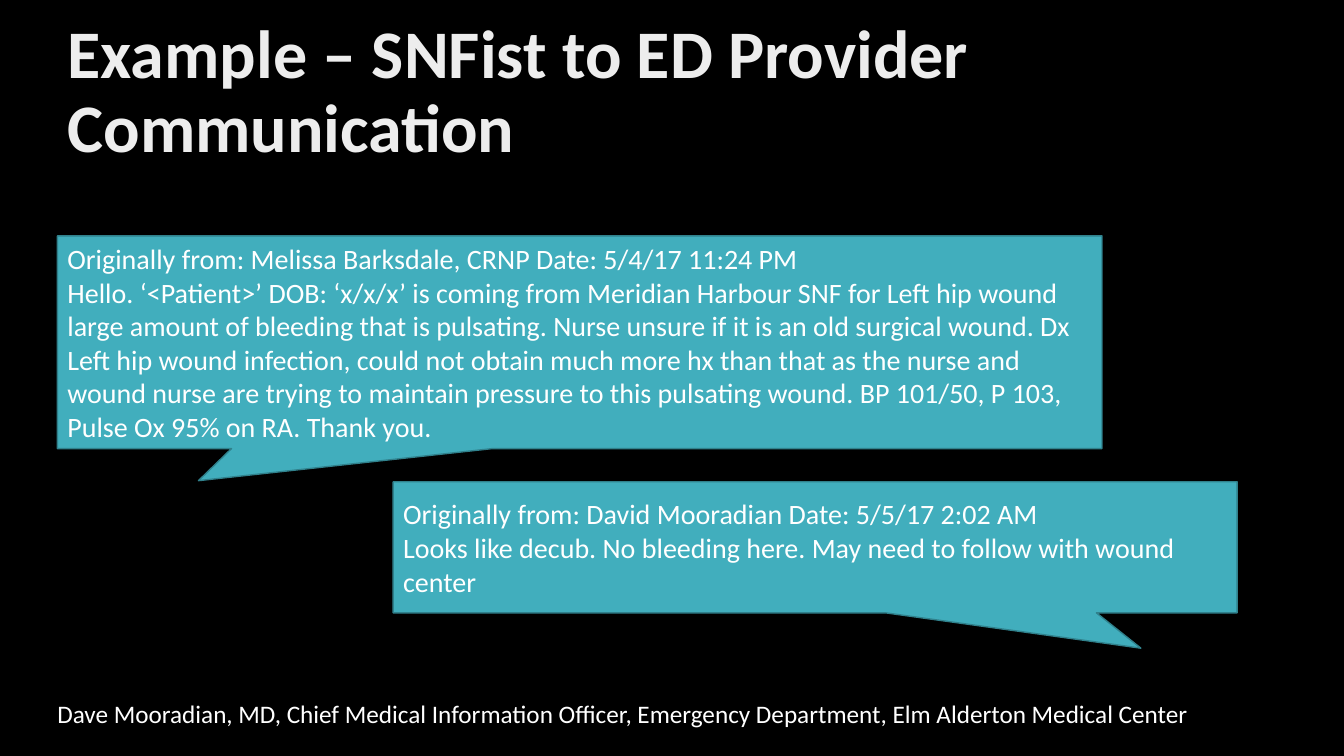
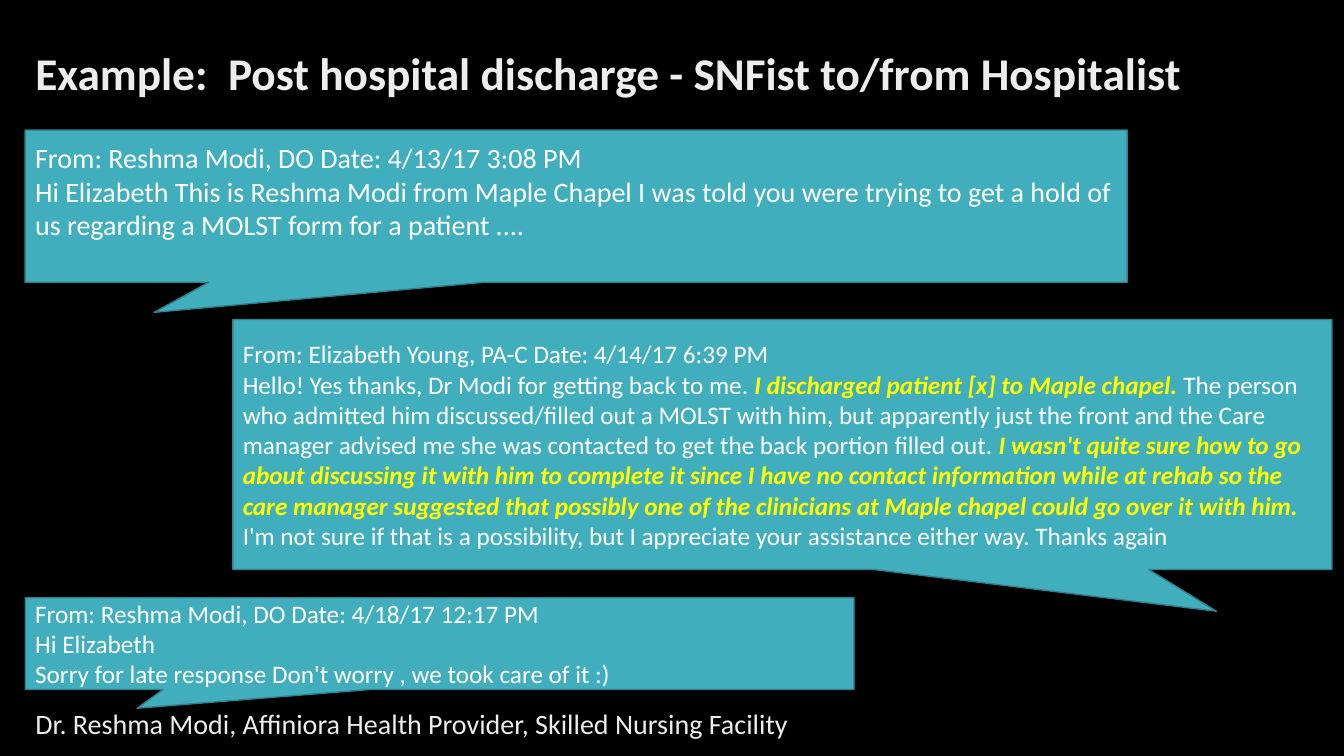
from pptx import Presentation
from pptx.dml.color import RGBColor
from pptx.enum import shapes, text
from pptx.util import Inches, Pt
from lxml import etree

FONT = "Calibri"
BLACK = RGBColor(0x00, 0x00, 0x00)
WHITE = RGBColor(0xFF, 0xFF, 0xFF)
SILVER = RGBColor(0xED, 0xED, 0xED)
TEAL = RGBColor(0x41, 0xAE, 0xBD)
DARK_TEAL = RGBColor(0x30, 0x81, 0x8C)
YELLOW = RGBColor(0xFF, 0xFF, 0x00)

TITLE_ONLY, TITLE_AND_BODY = 5, 1
PLAIN = dict(name=FONT, color=WHITE)
HIGHLIGHT = dict(name=FONT, color=YELLOW, bold=True, italic=True)

# Content: boxes are (left, top, width, height) in inches.
# A message paragraph alternates plain and highlighted pieces.
SLIDES = [
    dict(
        layout=TITLE_ONLY,
        title=("Example – SNFist to ED Provider Communication", (0.57, 0.2, 12.35, 1.45), 48.6),
        credit=("Dave Mooradian, MD, Chief Medical Information Officer, Emergency Department, "
                "Elm Alderton Medical Center", (0.47, 6.88, 12.37, 0.4), 18),
        messages=[
            dict(box=(0.57, 2.34, 10.36, 2.11), tail=(-0.365, 0.651), size=20, paragraphs=[
                ["Originally from: Melissa Barksdale, CRNP Date: 5/4/17 11:24 PM"],
                ["Hello. ‘<Patient>’ DOB: ‘x/x/x’ is coming from Meridian Harbour SNF for Left hip "
                 "wound large amount of bleeding that is pulsating. Nurse unsure if it is an old "
                 "surgical wound. Dx Left hip wound infection, could not obtain much more hx than "
                 "that as the nurse and wound nurse are trying to maintain pressure to this "
                 "pulsating wound. BP 101/50, P 103, Pulse Ox 95% on RA. Thank you."],
            ]),
            dict(box=(3.9, 4.78, 8.37, 1.3), tail=(0.386, 0.77), size=20, paragraphs=[
                ["Originally from: David Mooradian Date: 5/5/17 2:02 AM"],
                ["Looks like decub. No bleeding here. May need to follow with wound center"],
            ]),
        ],
    ),
    dict(
        layout=TITLE_AND_BODY,
        title=("Example:  Post hospital discharge - SNFist to/from Hospitalist",
               (0.25, 0.26, 12.66, 0.99), 32.4),
        credit=("Dr. Reshma Modi, Affiniora Health Provider, Skilled Nursing Facility",
                (0.25, 7, 11.5, 0.5), 20),
        messages=[
            dict(box=(0.25, 1.29, 10.93, 1.51), tail=(-0.383, 0.698), size=20, bottom=0.35,
                 paragraphs=[
                ["From: Reshma Modi, DO Date: 4/13/17 3:08 PM"],
                ["Hi Elizabeth This is Reshma Modi from Maple Chapel I was told you were trying to "
                 "get a hold of us regarding a MOLST form for a patient ...."],
            ]),
            dict(box=(2.31, 3.17, 10.9, 2.48), tail=(0.395, 0.667), size=18, paragraphs=[
                ["From: Elizabeth Young, PA-C Date: 4/14/17 6:39 PM"],
                ["Hello! Yes thanks, Dr Modi for getting back to me. ",
                 "I discharged patient [x] to Maple chapel. ",
                 "The person who admitted him discussed/filled out a MOLST with him, but apparently "
                 "just the front and the Care manager advised me she was contacted to get the back "
                 "portion filled out. ",
                 "I wasn't quite sure how to go about discussing it with him to complete it since I "
                 "have no contact information while at rehab so the care manager suggested that "
                 "possibly one of the clinicians at Maple chapel could go over it with him. ",
                 "I'm not sure if that is a possibility, but I appreciate your assistance either "
                 "way. Thanks again"],
            ]),
            dict(box=(0.25, 5.93, 8.22, 0.91), tail=(-0.365, 0.705), size=18, paragraphs=[
                ["From: Reshma Modi, DO Date: 4/18/17 12:17 PM"],
                ["Hi Elizabeth"],
                ["Sorry for late response Don't worry , we took care of it :)"],
            ]),
        ],
    ),
]


def style(font, size, color, **formats):
    font.size = Pt(size)
    font.color.rgb = color
    for key, value in formats.items():
        setattr(font, key, value)


def place(shape, box):
    for side, length in zip(("left", "top", "width", "height"), box):
        setattr(shape, side, Inches(length))


def write_line(shape, wording, size, anchor, **formats):
    """Fill a title or credit with one left-aligned paragraph."""
    frame = shape.text_frame
    frame.word_wrap = True
    frame.auto_size = text.MSO_AUTO_SIZE.NONE
    frame.vertical_anchor = anchor
    line = frame.paragraphs[0]
    line.text = wording
    line.alignment = text.PP_ALIGN.LEFT
    line.line_spacing = 0.9 if shape.is_placeholder else 1.0
    line.space_before = Pt(0)
    style(line.runs[0].font, size, name=FONT, **formats)


def remove_bullet(paragraph):
    properties = paragraph._p.get_or_add_pPr()
    properties.set("marL", "0")
    properties.set("indent", "0")
    namespace = etree.QName(properties).namespace
    etree.SubElement(properties, f"{{{namespace}}}buNone")


def add_message(slide, box, tail, size, paragraphs, bottom=0.05):
    bubble = slide.shapes.add_shape(shapes.MSO_SHAPE.RECTANGULAR_CALLOUT,
                                    *map(Inches, box))
    bubble.adjustments[0], bubble.adjustments[1] = tail
    bubble.shadow.inherit = False
    bubble.fill.solid()
    bubble.fill.fore_color.rgb = TEAL
    bubble.line.color.rgb = DARK_TEAL
    bubble.line.width = Pt(1)
    frame = bubble.text_frame
    frame.word_wrap = True
    frame.vertical_anchor = text.MSO_ANCHOR.MIDDLE
    frame.margin_bottom = Inches(bottom)
    for number, pieces in enumerate(paragraphs):
        paragraph = frame.add_paragraph() if number else frame.paragraphs[0]
        paragraph.alignment = text.PP_ALIGN.LEFT
        for position, piece in enumerate(pieces):
            run = paragraph.add_run()
            run.text = piece
            style(run.font, size, **(HIGHLIGHT if position % 2 else PLAIN))


def add_credit(slide, wording, box, size):
    if len(slide.placeholders) > 1:
        credit, color = slide.placeholders[1], SILVER
        place(credit, box)
        remove_bullet(credit.text_frame.paragraphs[0])
    else:
        credit, color = slide.shapes.add_textbox(*map(Inches, box)), WHITE
    write_line(credit, wording, size, text.MSO_ANCHOR.TOP, color=color)


def build_slide(deck, content):
    slide = deck.slides.add_slide(deck.slide_layouts[content["layout"]])
    wording, box, size = content["title"]
    place(slide.shapes.title, box)
    write_line(slide.shapes.title, wording, size, text.MSO_ANCHOR.MIDDLE,
               color=SILVER, bold=True)
    add_credit(slide, *content["credit"])
    for message in content["messages"]:
        add_message(slide, **message)


def main():
    deck = Presentation()
    deck.slide_width, deck.slide_height = Inches(13.33), Inches(7.5)
    # Shared black background
    backdrop = deck.slide_master.background.fill
    backdrop.solid()
    backdrop.fore_color.rgb = BLACK
    for content in SLIDES:
        build_slide(deck, content)
    deck.save("out.pptx")


if __name__ == "__main__":
    main()
